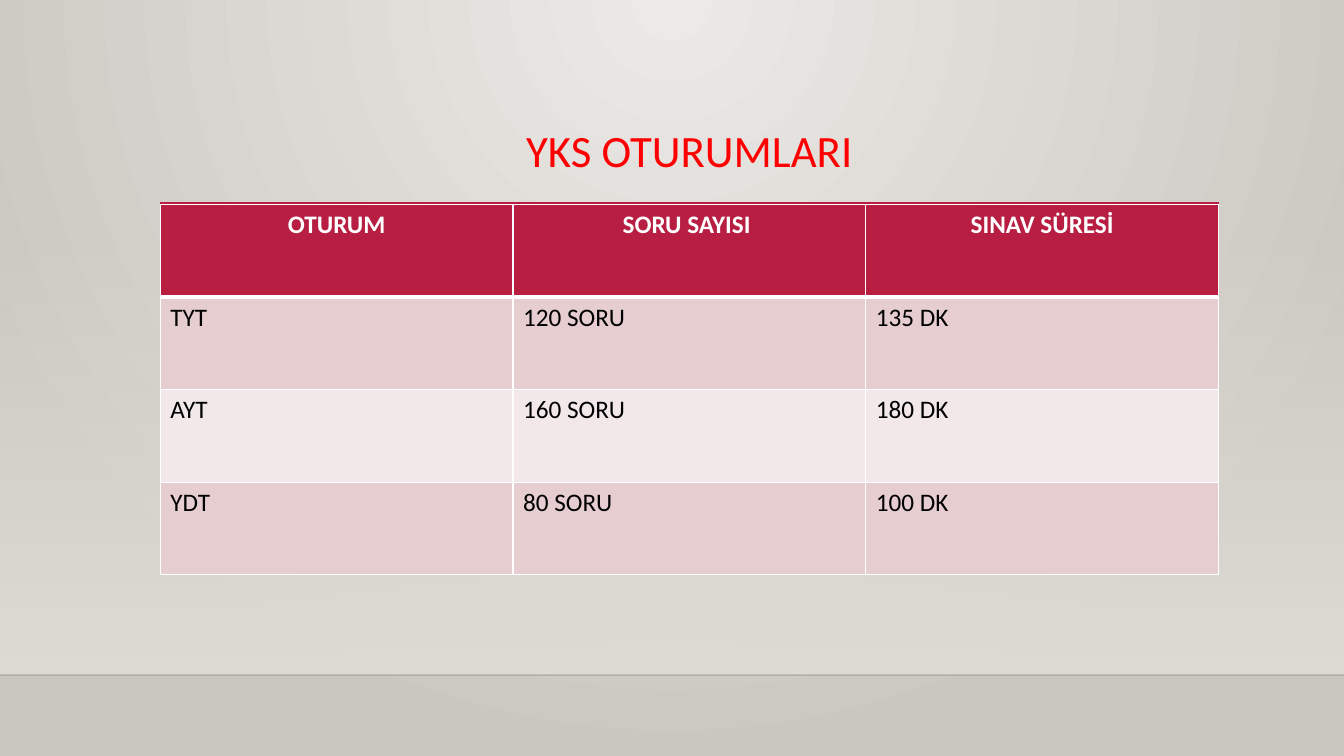
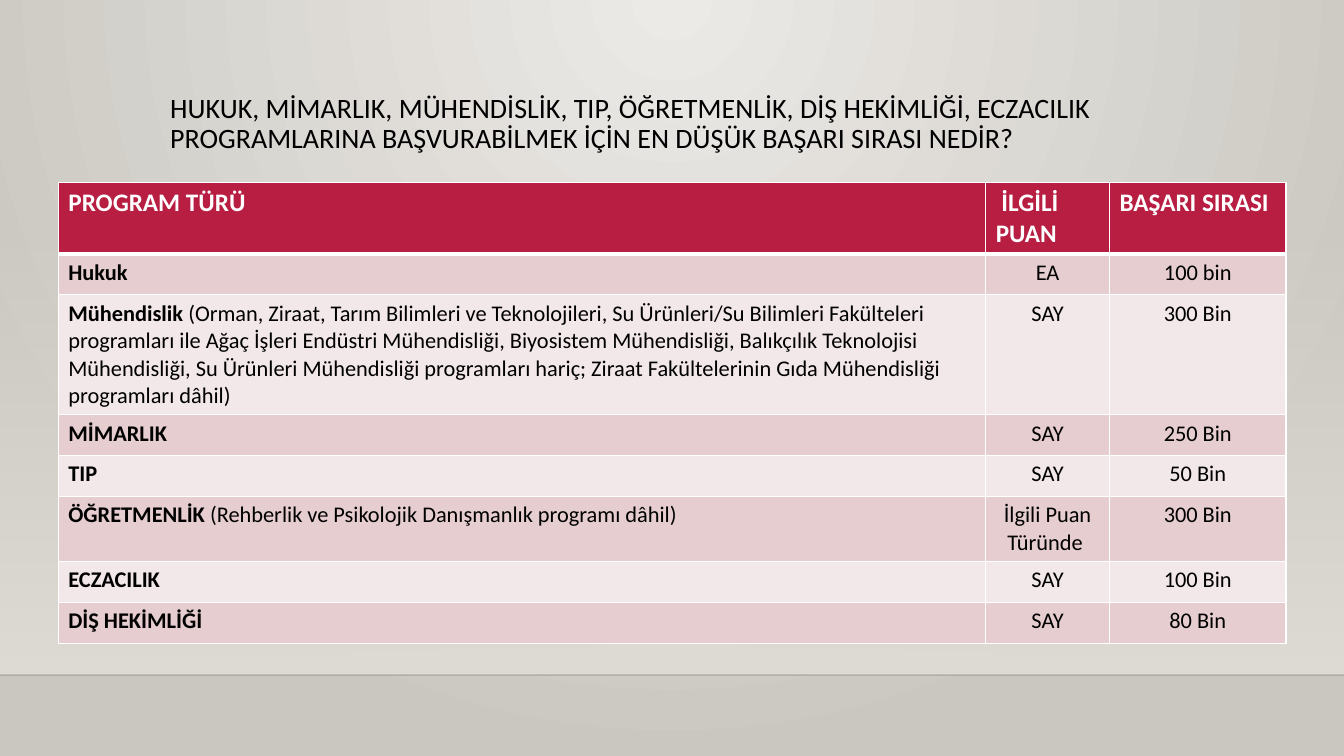
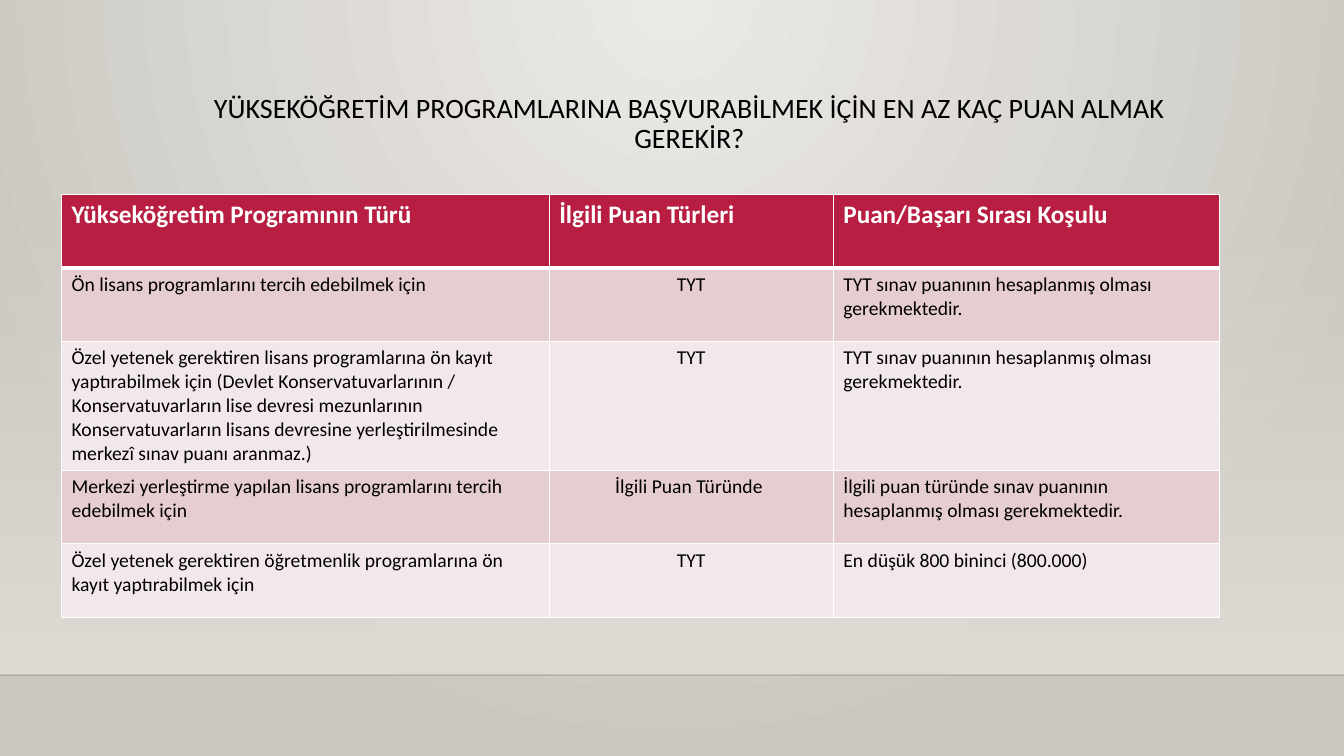
from pptx import Presentation
from pptx.dml.color import RGBColor
from pptx.enum.shapes import MSO_CONNECTOR, MSO_SHAPE
from pptx.enum.text import MSO_ANCHOR, PP_ALIGN
from pptx.oxml import parse_xml
from pptx.oxml.ns import nsdecls, qn
from pptx.oxml.xmlchemy import OxmlElement
from pptx.util import Cm, Pt

PAGE_WIDTH, PAGE_HEIGHT = 33.87, 19.05
FLOOR_TOP = 17.01
TITLE_LEFT, TITLE_WIDTH = 4.04, 26.67
FONT = "Calibri"

CRIMSON = RGBColor(0xB7, 0x1E, 0x42)
RED = RGBColor(0xFF, 0x00, 0x00)
BLACK = RGBColor(0x00, 0x00, 0x00)
WHITE = RGBColor(0xFF, 0xFF, 0xFF)
SHADE = RGBColor(0x00, 0x00, 0x01)
PALE = RGBColor(0xEC, 0xEA, 0xE7)
STONE = RGBColor(0xCA, 0xC7, 0xC1)
SAND = RGBColor(0xDF, 0xDB, 0xD5)
BANDS = (RGBColor(0xE6, 0xCD, 0xCF), RGBColor(0xF3, 0xE8, 0xE9))

LEFT, CENTER = PP_ALIGN.LEFT, PP_ALIGN.CENTER

SESSIONS = [
    ("OTURUM", "SORU SAYISI ", "SINAV SÜRESİ"),
    ("TYT", "120 SORU", "135 DK"),
    ("AYT", "160 SORU", "180 DK"),
    ("YDT", "80 SORU", "100 DK"),
]

# A pair in a cell holds a bold lead and the plain text after it.
RANKINGS = [
    ("PROGRAM TÜRÜ", " İLGİLİ PUAN", "BAŞARI SIRASI"),
    (("Hukuk", ""), "EA", "100 bin"),
    (("Mühendislik ",
      "(Orman, Ziraat, Tarım Bilimleri ve Teknolojileri, Su Ürünleri/Su Bilimleri "
      "Fakülteleri programları ile Ağaç İşleri Endüstri Mühendisliği, Biyosistem "
      "Mühendisliği, Balıkçılık Teknolojisi Mühendisliği, Su Ürünleri Mühendisliği "
      "programları hariç; Ziraat Fakültelerinin Gıda Mühendisliği programları dâhil)"),
     "SAY", "300 Bin"),
    (("MİMARLIK", ""), "SAY", "250 Bin"),
    (("TIP", ""), "SAY", "50 Bin"),
    (("ÖĞRETMENLİK", " (Rehberlik ve Psikolojik Danışmanlık programı dâhil)"),
     "İlgili Puan Türünde ", "300 Bin"),
    (("ECZACILIK", ""), "SAY", "100 Bin"),
    (("DİŞ HEKİMLİĞİ", ""), "SAY", "80 Bin"),
]

TYT_RULE = "TYT sınav puanının hesaplanmış olması gerekmektedir."
SCORES = [
    ("Yükseköğretim Programının Türü", "İlgili Puan Türleri",
     "Puan/Başarı Sırası Koşulu"),
    ("Ön lisans programlarını tercih edebilmek için", "TYT", TYT_RULE),
    ("Özel yetenek gerektiren lisans programlarına ön kayıt yaptırabilmek için "
     "(Devlet Konservatuvarlarının / Konservatuvarların lise devresi mezunlarının "
     "Konservatuvarların lisans devresine yerleştirilmesinde merkezî sınav puanı "
     "aranmaz.)", "TYT", TYT_RULE),
    ("Merkezi yerleştirme yapılan lisans programlarını tercih edebilmek için",
     "İlgili Puan Türünde ",
     "İlgili puan türünde sınav puanının hesaplanmış olması gerekmektedir."),
    ("Özel yetenek gerektiren öğretmenlik programlarına ön kayıt yaptırabilmek için",
     "TYT", "En düşük 800 bininci (800.000)"),
]


def style_span(span, color, **values):
    for name, value in {"name": FONT, **values}.items():
        setattr(span.font, name, value)
    span.font.color.rgb = color


def set_gradient(fill, *colors):
    fill.gradient()
    for stop, color in zip(fill.gradient_stops, colors):
        stop.color.rgb = color


def set_opacity(item, percent):
    """Apply the opacity to the first plain colour of the item."""
    color = next(item.element.iter(qn("a:srgbClr")))
    alpha = OxmlElement("a:alpha")
    alpha.set("val", str(percent * 1000))
    color.append(alpha)


def set_master_background(master):
    """Give every slide a glow that spreads from the top centre."""
    set_gradient(master.background.fill, PALE, STONE)
    linear = next(master.element.iter(qn("a:lin")))
    glow = parse_xml(
        f'<a:path {nsdecls("a")} path="circle">'
        '<a:fillToRect l="43000" t="0" r="43000" b="100000"/></a:path>')
    linear.getparent().replace(linear, glow)


def add_rule(page, left, top, width, color, weight):
    rule = page.shapes.add_connector(
        MSO_CONNECTOR.STRAIGHT, Cm(left), Cm(top), Cm(left + width), Cm(top))
    rule.line.color.rgb = color
    rule.line.width = Pt(weight)
    rule.element.spPr.append(OxmlElement("a:effectLst"))
    return rule


def add_page(deck):
    """Add a slide with the wall that fades in down to the floor line."""
    page = deck.slides.add_slide(deck.slide_layouts[6])
    wall_top = 5.61
    wall = page.shapes.add_shape(
        MSO_SHAPE.RECTANGLE, 0, Cm(wall_top), Cm(PAGE_WIDTH), Cm(FLOOR_TOP - wall_top))
    wall.shadow.inherit = False
    set_gradient(wall.fill, SAND, SAND)
    wall.fill.gradient_angle = 270
    wall.line.fill.background()
    set_opacity(wall, 0)
    set_opacity(add_rule(page, 0, FLOOR_TOP, PAGE_WIDTH, SHADE, 1), 20)
    return page


def add_title(page, top, height, text, size=20, color=BLACK, align=CENTER):
    box = page.shapes.add_textbox(Cm(TITLE_LEFT), Cm(top), Cm(TITLE_WIDTH), Cm(height))
    frame = box.text_frame
    frame.word_wrap = True
    frame.vertical_anchor = MSO_ANCHOR.TOP
    para = frame.paragraphs[0]
    para.text = text
    para.alignment = align
    para.line_spacing = 0.9
    for span in para.runs:
        style_span(span, color, size=Pt(size))


def set_borders(cell, weights):
    """Draw white borders; weights maps L, R, T and B, in that order, to points."""
    properties = cell._tc.get_or_add_tcPr()
    for index, (side, weight) in enumerate(weights.items()):
        properties.insert(index, parse_xml(
            f'<a:ln{side} {nsdecls("a")} w="{Pt(weight)}"><a:solidFill>'
            f'<a:srgbClr val="{WHITE}"/></a:solidFill></a:ln{side}>'))


def fill_cell(cell, content, size, color, align, bold):
    para = cell.text_frame.paragraphs[0]
    para.alignment = align
    pieces = ((content, bold),)
    if isinstance(content, tuple):
        pieces = zip(content, (True, False))
    for text, is_bold in pieces:
        if text:
            span = para.add_run()
            span.text = text
            style_span(span, color, size=Pt(size), bold=is_bold)


def add_grid(page, left, top, widths, heights, rows, size, aligns, head_align=LEFT):
    """Add a table with a crimson head row and body rows in two bands."""
    table = page.shapes.add_table(
        len(rows), len(widths), Cm(left), Cm(top),
        Cm(sum(widths)), Cm(sum(heights))).table
    table.horz_banding = False
    for column, width in zip(table.columns, widths):
        column.width = Cm(width)
    for row, height in zip(table.rows, heights):
        row.height = Cm(height)
    for row_index, contents in enumerate(rows):
        is_head = row_index == 0
        for column_index, content in enumerate(contents):
            cell = table.cell(row_index, column_index)
            cell.fill.solid()
            if is_head:
                cell.fill.fore_color.rgb = CRIMSON
                set_borders(cell, {"L": 1, "R": 1, "T": 1, "B": 3})
                fill_cell(cell, content, 18, WHITE, head_align, True)
            else:
                cell.fill.fore_color.rgb = BANDS[(row_index - 1) % 2]
                set_borders(cell, {"L": 1, "R": 1, "B": 1})
                fill_cell(cell, content, size, BLACK, aligns[column_index], False)


def add_sessions_page(deck):
    page = add_page(deck)
    add_rule(page, TITLE_LEFT, 5.13, TITLE_WIDTH, CRIMSON, 2.5)
    add_title(page, 3.12, 2.03, "YKS OTURUMLARI", size=32, color=RED)
    add_grid(page, TITLE_LEFT, 5.16, [TITLE_WIDTH / 3] * 3, [2.33] * 4, SESSIONS,
             18, (LEFT, LEFT, LEFT), head_align=CENTER)


def add_rankings_page(deck):
    page = add_page(deck)
    add_title(page, 2.24, 3.07,
              "HUKUK, MİMARLIK, MÜHENDİSLİK, TIP, ÖĞRETMENLİK, DİŞ HEKİMLİĞİ, ECZACILIK\v"
              "PROGRAMLARINA BAŞVURABİLMEK İÇİN EN DÜŞÜK BAŞARI SIRASI NEDİR?", align=LEFT)
    single = 1.03
    heights = [1.8, single, 3.02, single, single, 1.64, single, single]
    add_grid(page, 1.47, 4.6, [23.37, 3.12, 4.45], heights, RANKINGS,
             16, (LEFT, CENTER, CENTER))


def add_scores_page(deck):
    page = add_page(deck)
    add_title(page, 2.24, 1.98,
              "YÜKSEKÖĞRETİM PROGRAMLARINA BAŞVURABİLMEK İÇİN EN AZ KAÇ PUAN ALMAK GEREKİR?")
    double = 1.85
    add_grid(page, 1.55, 4.9, [12.29, 7.16, 9.73],
             [double, double, 3.25, double, double], SCORES, 14, (LEFT, CENTER, LEFT))


def main():
    deck = Presentation()
    deck.slide_width, deck.slide_height = Cm(PAGE_WIDTH), Cm(PAGE_HEIGHT)
    set_master_background(deck.slide_master)
    for add_content in (add_sessions_page, add_rankings_page, add_scores_page):
        add_content(deck)
    deck.save("out.pptx")


if __name__ == "__main__":
    main()
